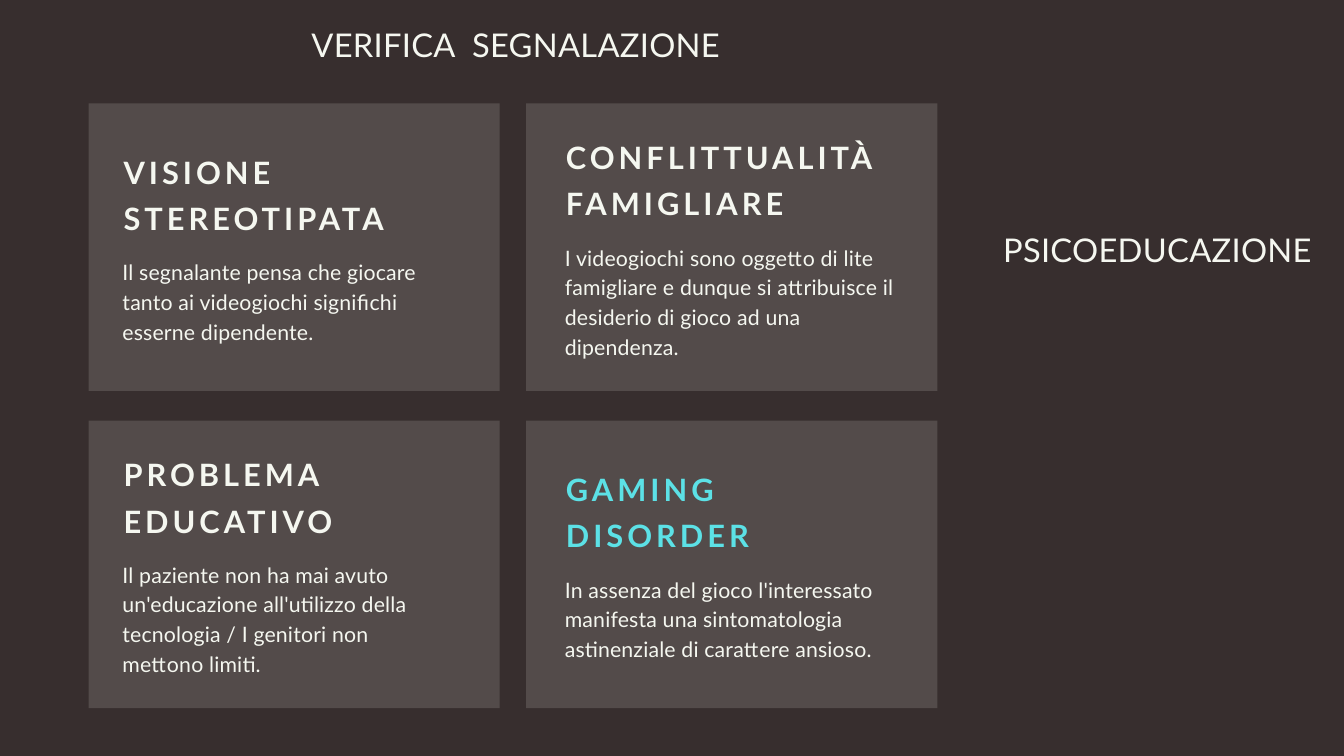
from lxml.etree import SubElement
from pptx import Presentation
from pptx.dml.color import RGBColor
from pptx.enum.shapes import MSO_SHAPE as Shape
from pptx.enum.text import MSO_ANCHOR as Anchor, MSO_AUTO_SIZE as AutoSize, PP_ALIGN as Align
from pptx.oxml.ns import qn
from pptx.util import Cm, Pt

COLORS = {"background": "372E2E", "light": "F5F7F0", "accent": "5CE1E6"}
FONT = "Lato"

CARD_LEFT, CARD_TOP = 3.35, 3.91
CARD_WIDTH, CARD_HEIGHT = 15.54, 10.87
COLUMN_STEP, ROW_STEP = 16.54, 11.99
TEXT_INSETS = (1.32, 1.5)  # one for each column
TEXT_WIDTH, HEADING_HEIGHT = 12.57, 3.35
BODY_OFFSET, BODY_LINE = 4.19, 1.12
LABEL_WIDTH, LABEL_HEIGHT = 24.77, 1.6

# row, column, heading, heading colour, body, lines in the body
CARDS = [
    (1, 0, "PROBLEMA EDUCATIVO", "light",
     "Il paziente non ha mai avuto un'educazione all'utilizzo della tecnologia / "
     "I genitori non mettono limiti.", 4),
    (1, 1, "GAMING DISORDER", "accent",
     "In assenza del gioco l'interessato manifesta una sintomatologia astinenziale "
     "di carattere ansioso.", 3),
    (0, 0, "VISIONE STEREOTIPATA", "light",
     "Il segnalante pensa che giocare tanto ai videogiochi significhi esserne dipendente.", 3),
    (0, 1, "CONFLITTUALITÀ FAMIGLIARE", "light",
     "I videogiochi sono oggetto di lite famigliare e dunque si attribuisce il desiderio "
     "di gioco ad una dipendenza.", 4),
]


class SlideBuilder:
    def __init__(self, page):
        self.page = page
        page.background.fill.solid()
        page.background.fill.fore_color.rgb = self.color("background")

    def color(self, name):
        return RGBColor.from_string(COLORS[name])

    def set_text(self, box, text, size, leading, tracking, color="light", bold=False,
                 align=Align.LEFT):
        frame = box.text_frame
        frame.text = text
        frame.word_wrap = True
        frame.auto_size = AutoSize.SHAPE_TO_FIT_TEXT
        frame.vertical_anchor = Anchor.TOP
        frame.margin_left = frame.margin_right = frame.margin_top = frame.margin_bottom = 0
        para = frame.paragraphs[0]
        para.alignment = align
        para.line_spacing = Pt(leading)
        para.space_before = Pt(0)
        span = para.runs[0]
        span.font.name = FONT
        span.font.size = Pt(size)
        span.font.bold = bold
        span.font.color.rgb = self.color(color)
        span._r.get_or_add_rPr().set("spc", str(round(tracking * 100)))

    def label(self, box, text):
        self.set_text(box, text, 35, 47.6, 0.3, align=Align.RIGHT)

    def title(self, text, left, top):
        box = self.page.shapes.title
        box.left, box.top = Cm(left), Cm(top)
        box.width, box.height = Cm(LABEL_WIDTH), Cm(LABEL_HEIGHT)
        self.label(box, text)

    def side_label(self, text, left, top):
        box = self.page.shapes.add_textbox(Cm(left), Cm(top), Cm(LABEL_WIDTH), Cm(LABEL_HEIGHT))
        self.label(box, text)

    def panel(self, left, top):
        """Draw the translucent rectangle behind a card's text."""
        panel = self.page.shapes.add_shape(
            Shape.RECTANGLE, Cm(left), Cm(top), Cm(CARD_WIDTH), Cm(CARD_HEIGHT))
        panel.shadow.inherit = False
        panel.line.fill.background()
        panel.fill.solid()
        panel.fill.fore_color.rgb = self.color("light")
        fill_color = next(panel._element.iter(qn("a:srgbClr")))
        SubElement(fill_color, qn("a:alpha")).set("val", "15000")

    def card(self, row, column, heading, color, body, lines):
        left = CARD_LEFT + column * COLUMN_STEP
        top = CARD_TOP + row * ROW_STEP
        self.panel(left, top)

        body_height = lines * BODY_LINE - 0.11
        text_left = left + TEXT_INSETS[column]
        # The text block sits slightly above the middle of its panel.
        text_top = top + (CARD_HEIGHT - BODY_OFFSET - body_height) / 2 - 0.16
        group = self.page.shapes.add_group_shape()
        heading_box = group.shapes.add_textbox(
            Cm(text_left), Cm(text_top), Cm(TEXT_WIDTH), Cm(HEADING_HEIGHT))
        self.set_text(heading_box, heading, 33, 49.5, 4.3, color, bold=True)
        body_box = group.shapes.add_textbox(
            Cm(text_left - 0.04), Cm(text_top + BODY_OFFSET), Cm(TEXT_WIDTH), Cm(body_height))
        self.set_text(body_box, body, 22.8, 31.9, 0.2)


def main():
    deck = Presentation()
    deck.slide_width, deck.slide_height = Cm(50.8), Cm(28.58)
    title_only = deck.slide_layouts[5]
    builder = SlideBuilder(deck.slides.add_slide(title_only))
    builder.title("VERIFICA  SEGNALAZIONE", 2.46, 0.76)
    for card in CARDS:
        builder.card(*card)
    builder.side_label("PSICOEDUCAZIONE", 24.82, 8.48)
    deck.save("out.pptx")


if __name__ == "__main__":
    main()
